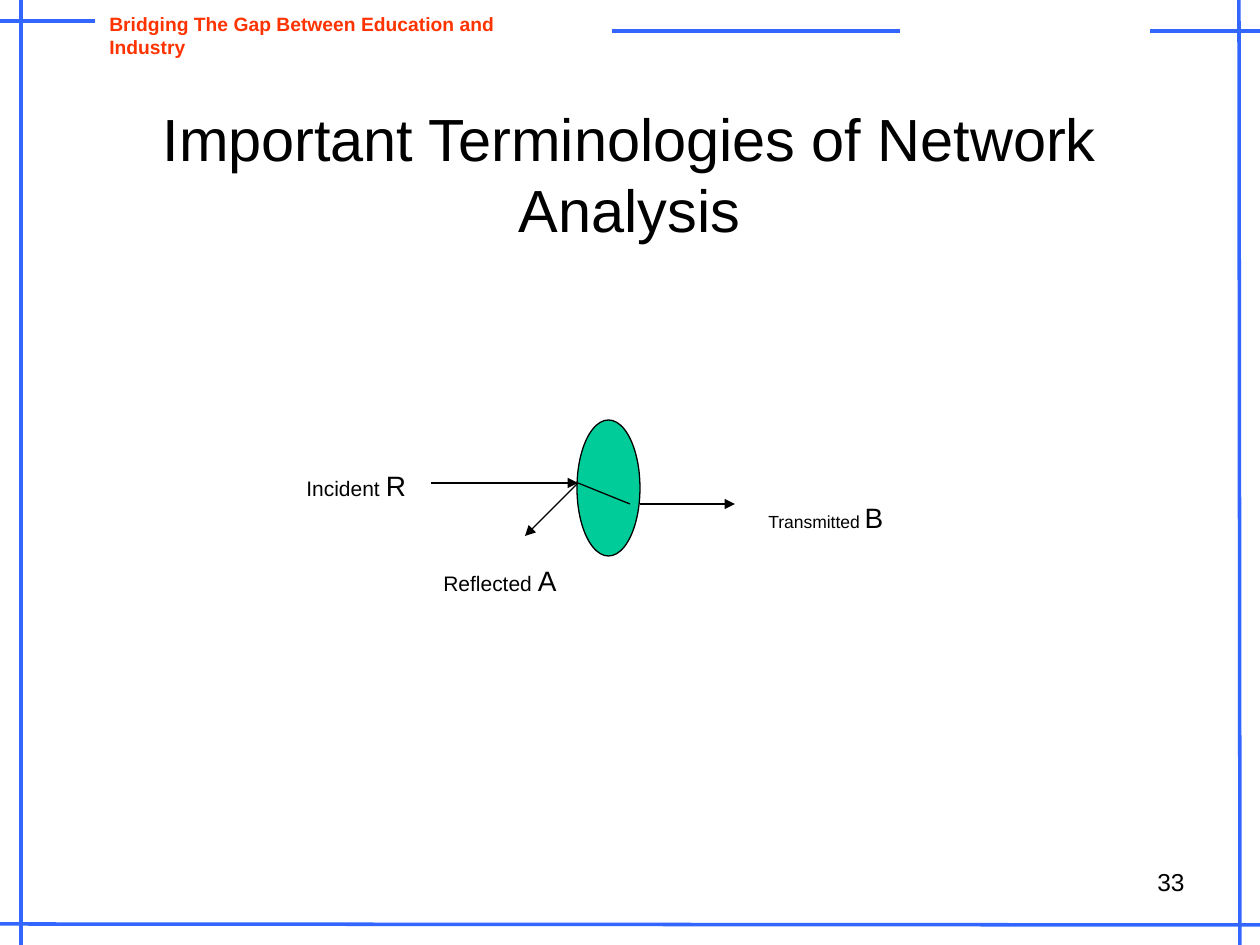
from lxml.etree import SubElement
from pptx import Presentation
from pptx.dml.color import RGBColor
from pptx.enum.shapes import MSO_CONNECTOR as Connector, MSO_SHAPE as Shape
from pptx.enum.text import MSO_ANCHOR as Anchor, MSO_AUTO_SIZE as AutoSize, PP_ALIGN as Align
from pptx.oxml.ns import qn
from pptx.util import Pt

EMU_PER_PX = 914400 / 126
COLORS = {"frame": "3366FF", "motto": "FF3300", "lens": "00CC99", "ink": "000000"}

# Ends of each line: x1, y1, x2, y2
FRAME_LINES = [
    (1150, 31, 1260, 31),
    (21, 0, 21, 945),
    (1239, 0, 1240, 945),
    (0, 924, 1260, 925),
    (0, 21, 95, 21),
    (900, 31, 612, 31),
]
RAYS = [
    ((578, 483, 525, 536), True),
    ((431, 483, 578, 483), True),
    ((578, 483, 630, 504), False),
    ((640, 504, 735, 504), True),
]
# Box, word, word size, symbol
RAY_LABELS = [
    ((294, 462, 147, 47), "Incident ", 12, "R"),
    ((431, 557, 168, 47), "Reflected ", 12, "A"),
    ((756, 494, 189, 47), "Transmitted ", 10, "B"),
]


def px(*lengths):
    return [round(length * EMU_PER_PX) for length in lengths]


def color(name):
    return RGBColor.from_string(COLORS[name])


def set_all(target, values):
    for name, value in values.items():
        setattr(target, name, value)


def add_line(slide, ends, color_name, width, arrow=False):
    line = slide.shapes.add_connector(Connector.STRAIGHT, *px(*ends))
    line.line.color.rgb = color(color_name)
    line.line.width = Pt(width)
    if arrow:
        SubElement(line.line._get_or_add_ln(), qn("a:tailEnd"), type="triangle")
    SubElement(line._element.spPr, qn("a:effectLst"))


def add_runs(paragraph, runs, color_name="ink", bold=False):
    for text, size in runs:
        run = paragraph.add_run()
        run.text = text
        set_all(run.font, {"name": "Arial", "size": Pt(size), "bold": bold})
        run.font.color.rgb = color(color_name)


def add_text(slide, box, runs, align=Align.LEFT, wrap=True, **font):
    frame = slide.shapes.add_textbox(*px(*box)).text_frame
    frame.word_wrap = wrap
    paragraph = frame.paragraphs[0]
    paragraph.alignment = align
    add_runs(paragraph, runs, **font)


def add_title(slide, box, text, size):
    title = slide.shapes.title
    set_all(title, dict(zip(("left", "top", "width", "height"), px(*box))))
    frame = title.text_frame
    set_all(frame, {
        "margin_left": 0, "margin_top": 0, "margin_right": 0, "margin_bottom": 0,
        "vertical_anchor": Anchor.MIDDLE, "word_wrap": True, "auto_size": AutoSize.NONE,
    })
    paragraph = frame.paragraphs[0]
    paragraph.alignment = Align.CENTER
    add_runs(paragraph, [(text, size)])


def add_lens(slide, box):
    lens = slide.shapes.add_shape(Shape.OVAL, *px(*box))
    lens.shadow.inherit = False
    lens.fill.solid()
    lens.fill.fore_color.rgb = color("lens")
    lens.line.color.rgb = color("ink")
    lens.line.width = Pt(0.75)


def main():
    presentation = Presentation()
    presentation.slide_width, presentation.slide_height = px(1260, 945)
    slide = presentation.slides.add_slide(presentation.slide_layouts[5])

    # Page frame and header
    for ends in FRAME_LINES:
        add_line(slide, ends, "frame", 2)
    add_text(slide, (97, 6, 491, 37), [("Bridging The Gap Between Education and Industry", 11)],
             wrap=False, color_name="motto", bold=True)
    add_title(slide, (63, 95, 1133, 157), "Important Terminologies of Network Analysis", 34)

    # Lens with incident, reflected and transmitted rays
    add_lens(slide, (577, 420, 63, 136))
    for ends, arrow in RAYS:
        add_line(slide, ends, "ink", 0.75, arrow)
    for box, word, size, symbol in RAY_LABELS:
        add_text(slide, box, [(word, size), (symbol, 16)])

    # Page number
    add_text(slide, (903, 861, 294, 66), [("33", 14)], align=Align.RIGHT)
    presentation.save("out.pptx")


if __name__ == "__main__":
    main()
